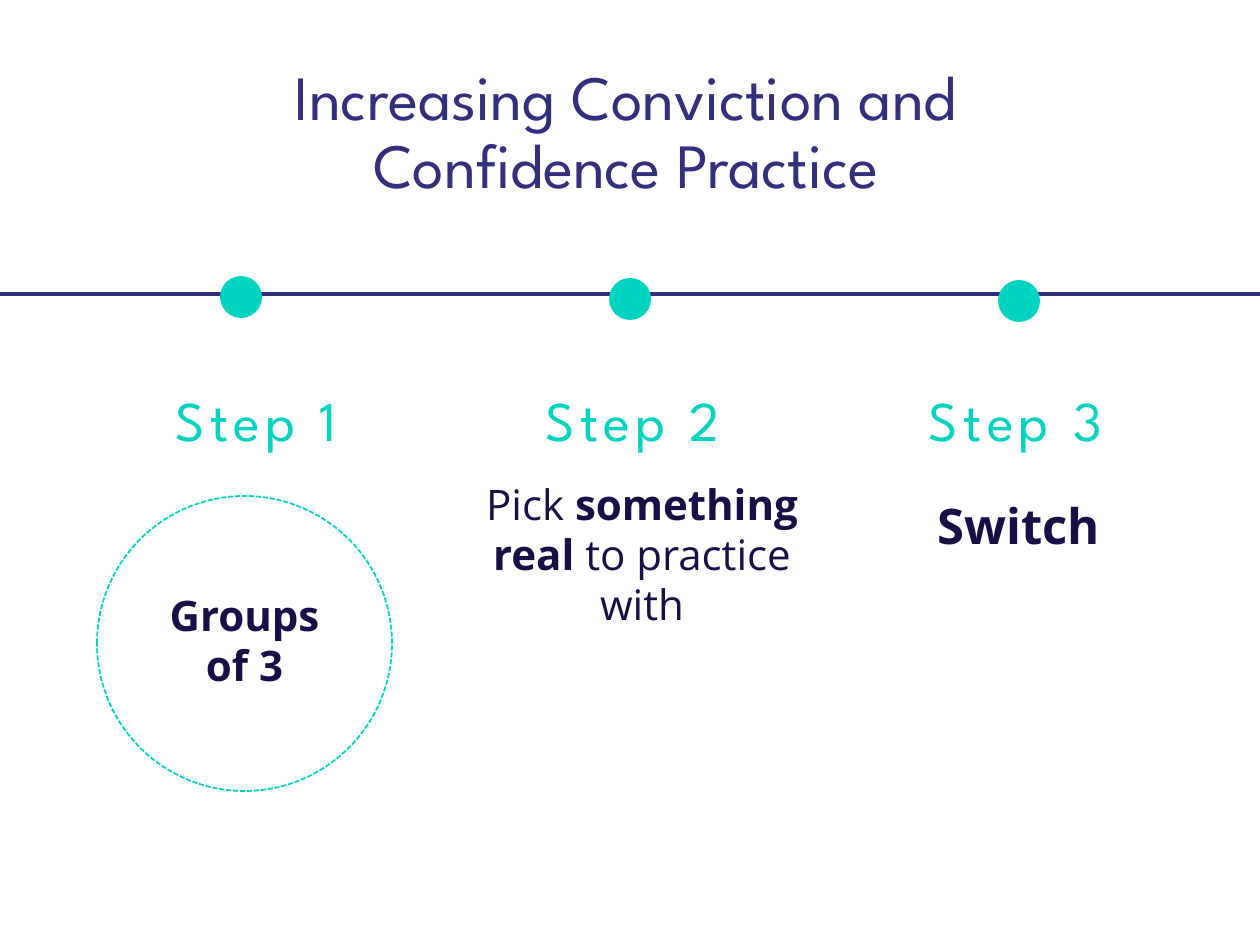
"""Build a three-step practice timeline slide."""
import pptx
import pptx.dml.color
import pptx.enum.dml
import pptx.enum.shapes
import pptx.enum.text
import pptx.oxml.ns
import pptx.util

PX = 914400 / 126
WIDTH, HEIGHT = 1260, 945
INDIGO, TEAL, NAVY = "322F7C", "00D3C0", "171046"

TITLE_FONT = {"name": "League Spartan", "size": pptx.util.Pt(36)}
STEP_FONT = {"name": "League Spartan", "size": pptx.util.Pt(32)}
BODY_FONT = {"name": "Open Sans", "size": pptx.util.Pt(24)}
SWITCH_FONT = {"name": "Open Sans", "size": pptx.util.Pt(28)}

TITLE = ("Increasing Conviction and Confidence Practice", (199, 60, 854, 149))
STEPS = [("Step 1", 84), ("Step 2 ", 470), ("Step 3", 843)]
DETAILS = [
    ([("Groups of 3", True)], (147, 583, 195, 115), BODY_FONT),
    ([("Pick ", False), ("something real ", True), ("to practice with", False)],
     (445, 472, 394, 165), BODY_FONT),
    ([("Switch", True)], (903, 489, 231, 72), SWITCH_FONT),
]
STEP_TOP, STEP_WIDTH, STEP_HEIGHT, STEP_TRACKING = 379, 345, 81, 300
LINE_TOP = 294
DOT_LEFT, DOT_TOP, DOT_SIZE, DOT_GAP, DOT_DROP = 220, 276, 42, 389, 2
RING = (97, 496, 295, 295)


def px(*lengths):
    return [pptx.util.Emu(round(length * PX)) for length in lengths]


def color(value):
    return pptx.dml.color.RGBColor.from_string(value)


def add_text(page, spans, place, font, ink, anchor="TOP"):
    box = page.shapes.add_textbox(*px(*place))
    box.text_frame.word_wrap = True
    box.text_frame.vertical_anchor = getattr(pptx.enum.text.MSO_ANCHOR, anchor)
    para = box.text_frame.paragraphs[0]
    para.alignment = pptx.enum.text.PP_ALIGN.CENTER
    for text, bold in spans:
        span = para.add_run()
        span.text = text
        for name, value in {**font, "bold": bold}.items():
            setattr(span.font, name, value)
        span.font.color.rgb = color(ink)
    return para


def add_circle(page, place):
    circle = page.shapes.add_shape(pptx.enum.shapes.MSO_SHAPE.OVAL, *px(*place))
    circle.shadow.inherit = False
    return circle


def add_timeline(page):
    line = page.shapes.add_connector(
        pptx.enum.shapes.MSO_CONNECTOR.STRAIGHT, *px(0, LINE_TOP, WIDTH, LINE_TOP))
    line.line.color.rgb = color(INDIGO)
    line.line.width = pptx.util.Pt(2.25)
    properties = line._element.spPr
    properties.append(properties.makeelement(pptx.oxml.ns.qn("a:effectLst"), {}))
    for index in range(len(STEPS)):
        dot = add_circle(page, (DOT_LEFT + index * DOT_GAP, DOT_TOP + index * DOT_DROP,
                                DOT_SIZE, DOT_SIZE))
        dot.fill.solid()
        dot.fill.fore_color.rgb = color(TEAL)
        dot.line.fill.background()


def add_ring(page):
    ring = add_circle(page, RING)
    ring.fill.background()
    ring.line.color.rgb = color(TEAL)
    ring.line.width = pptx.util.Pt(1)
    ring.line.dash_style = pptx.enum.dml.MSO_LINE.SQUARE_DOT


def main():
    deck = pptx.Presentation()
    deck.slide_width, deck.slide_height = px(WIDTH, HEIGHT)
    page = deck.slides.add_slide(deck.slide_layouts[6])
    add_timeline(page)
    text, place = TITLE
    add_text(page, [(text, False)], place, TITLE_FONT, INDIGO, "MIDDLE").line_spacing = 0.9
    add_ring(page)
    for text, left in STEPS:
        para = add_text(page, [(text, False)], (left, STEP_TOP, STEP_WIDTH, STEP_HEIGHT),
                        STEP_FONT, TEAL)
        para.runs[0].font._element.set("spc", str(STEP_TRACKING))
    for spans, place, font in DETAILS:
        add_text(page, spans, place, font, NAVY)
    deck.save("out.pptx")


if __name__ == "__main__":
    main()
